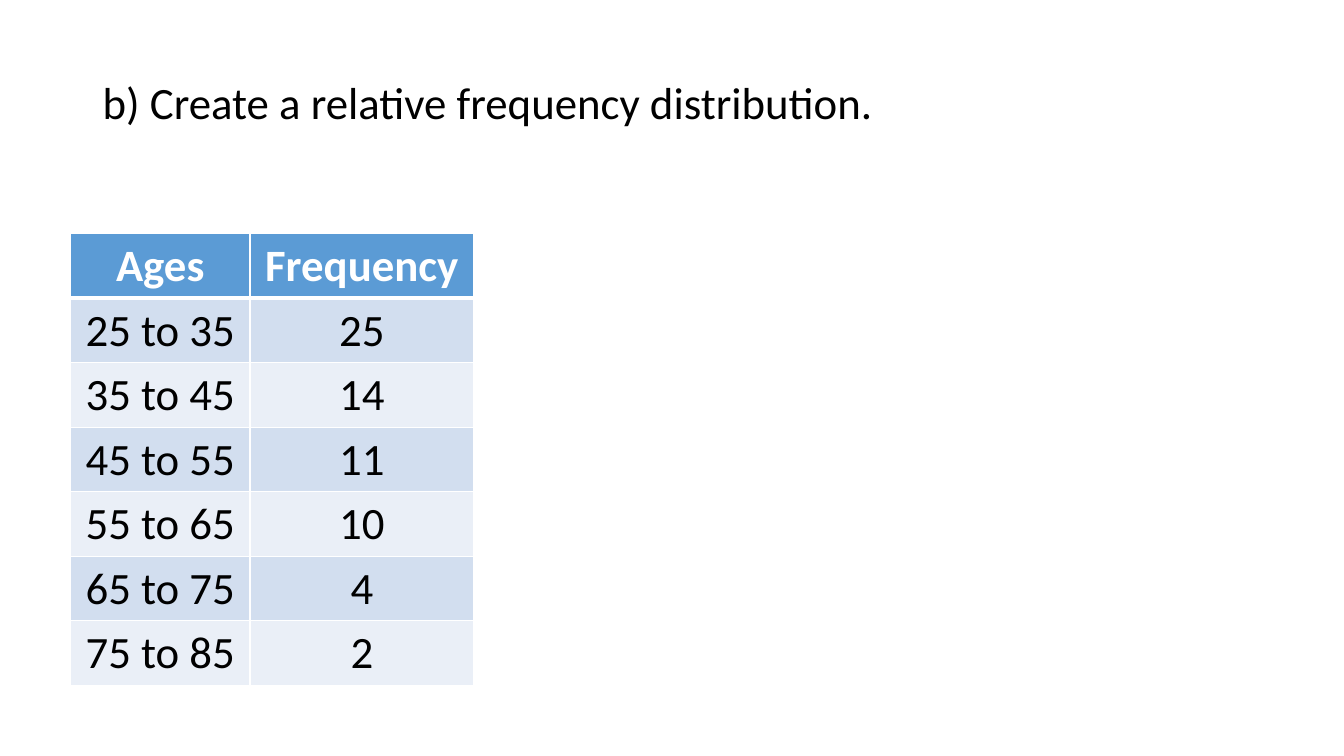
"""Build a slide with an age frequency table and its exercise prompt."""
from dataclasses import dataclass

from lxml.etree import SubElement
from pptx import Presentation
from pptx.dml.color import RGBColor
from pptx.enum.text import PP_ALIGN as Align, MSO_ANCHOR as Anchor
from pptx.oxml.ns import qn
from pptx.slide import Slide
from pptx.table import _Cell as Cell
from pptx.text.text import _Paragraph as Paragraph
from pptx.util import Inches, Pt

WHITE = RGBColor(0xFF, 0xFF, 0xFF)
BLACK = RGBColor(0x00, 0x00, 0x00)
HEADER_BLUE = RGBColor(0x5B, 0x9B, 0xD5)
BAND_DARK = RGBColor(0xD2, 0xDE, 0xEF)
BAND_LIGHT = RGBColor(0xEA, 0xEF, 0xF7)


@dataclass(frozen=True)
class AgeClass:
    ages: str
    frequency: str


@dataclass(frozen=True)
class RowStyle:
    fill: RGBColor
    ink: RGBColor
    bold: bool = False
    top_border: float = 1
    bottom_border: float = 1


HEADER = RowStyle(HEADER_BLUE, WHITE, bold=True, bottom_border=3)
FIRST_BAND = RowStyle(BAND_DARK, BLACK, top_border=3)
BANDS = (RowStyle(BAND_LIGHT, BLACK), RowStyle(BAND_DARK, BLACK))

AGE_CLASSES = [
    AgeClass("Ages", "Frequency"),
    AgeClass("25 to 35", "25"),
    AgeClass("35 to 45", "14"),
    AgeClass("45 to 55", "11"),
    AgeClass("55 to 65", "10"),
    AgeClass("65 to 75", "4"),
    AgeClass("75 to 85", "2"),
]


def add_run(paragraph: Paragraph, wording: str, ink: RGBColor, bold: bool = False) -> None:
    run = paragraph.add_run()
    run.text = wording
    run.font.name = "Calibri"
    run.font.size = Pt(32)
    run.font.bold = bold
    run.font.color.rgb = ink


def add_border(cell: Cell, side: str, width: float) -> None:
    line = SubElement(cell._tc.get_or_add_tcPr(), qn(f"a:{side}"), w=str(Pt(width)))
    SubElement(SubElement(line, qn("a:solidFill")), qn("a:srgbClr"), val=str(WHITE))


def fill_cell(cell: Cell, wording: str, style: RowStyle) -> None:
    add_border(cell, "lnL", 1)
    add_border(cell, "lnR", 1)
    add_border(cell, "lnT", style.top_border)
    add_border(cell, "lnB", style.bottom_border)
    cell.fill.solid()
    cell.fill.fore_color.rgb = style.fill
    paragraph = cell.text_frame.paragraphs[0]
    paragraph.alignment = Align.CENTER
    add_run(paragraph, wording, style.ink, style.bold)


def row_style(index: int) -> RowStyle:
    if index == 0:
        return HEADER
    return FIRST_BAND if index == 1 else BANDS[index % 2]


def add_prompt(slide: Slide) -> None:
    prompt = slide.shapes.add_textbox(Inches(0.92), Inches(0.75), Inches(11.5), Inches(6.01))
    frame = prompt.text_frame
    frame.word_wrap = True
    frame.vertical_anchor = Anchor.TOP
    paragraph = frame.paragraphs[0]
    paragraph.line_spacing = 0.9
    paragraph.space_before = Pt(10)
    add_run(paragraph, "b) Create a relative frequency distribution.", BLACK)


def add_distribution(slide: Slide) -> None:
    distribution = slide.shapes.add_table(
        len(AGE_CLASSES), 2, Inches(0.7), Inches(2.32), Inches(4), Inches(0.64 * len(AGE_CLASSES))
    ).table
    distribution.columns[0].width = Inches(1.78)
    distribution.columns[1].width = Inches(2.22)
    for index, age_class in enumerate(AGE_CLASSES):
        for column, wording in enumerate((age_class.ages, age_class.frequency)):
            fill_cell(distribution.cell(index, column), wording, row_style(index))


def main() -> None:
    deck = Presentation()
    deck.slide_width = Inches(13.33)
    deck.slide_height = Inches(7.5)
    slide = deck.slides.add_slide(deck.slide_layouts[6])
    add_prompt(slide)
    add_distribution(slide)
    deck.save("out.pptx")


if __name__ == "__main__":
    main()
